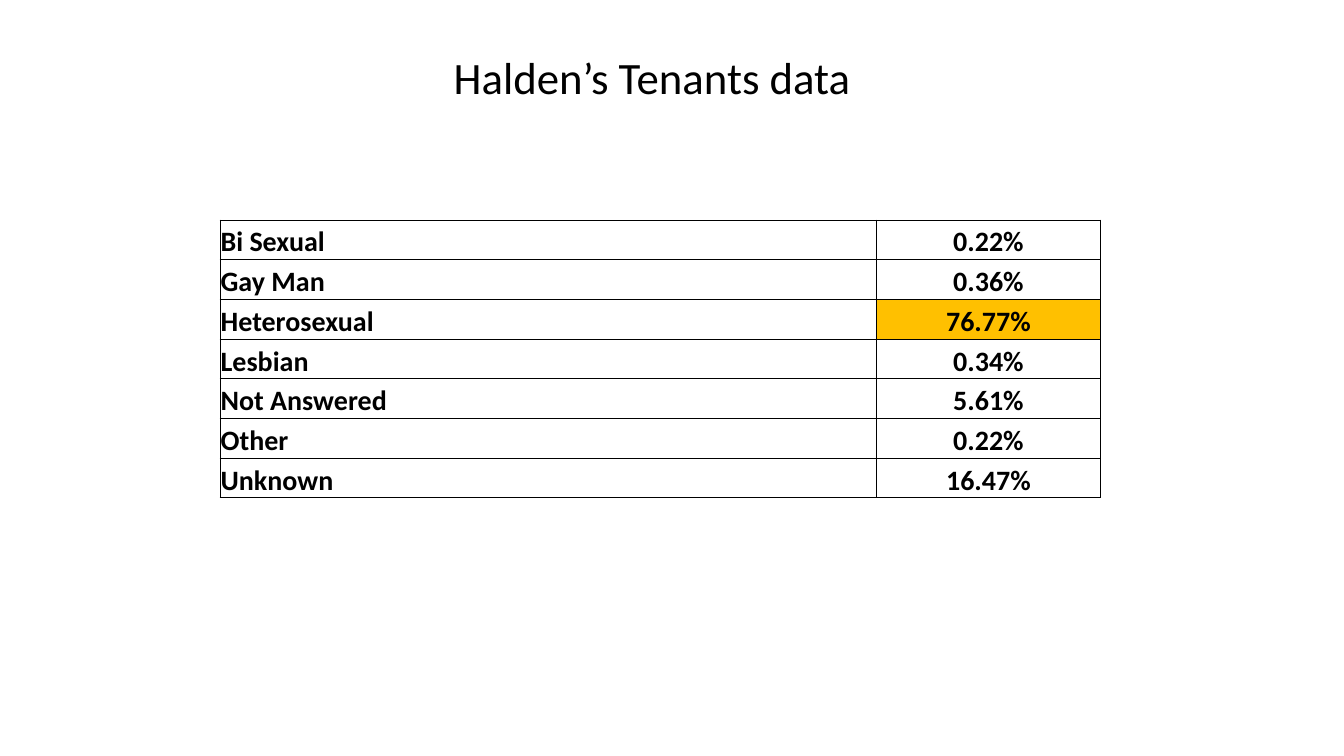
from dataclasses import dataclass

from lxml import etree
from pptx import Presentation
from pptx import util as u
from pptx.dml.color import RGBColor
from pptx.enum import text
from pptx.oxml import ns


@dataclass(frozen=True)
class Theme:
    font: str = "Calibri"
    ink: str = "000000"
    highlight: str = "FFC000"
    title_size: int = 32
    cell_size: int = 20
    border_width: float = 0.5


THEME = Theme()
LEFT = u.Cm(5.54)
COLUMN_WIDTHS = (u.Cm(16.54), u.Cm(5.66))
ROW_HEIGHT = u.Cm(1)
HIGHLIGHTED = "Heterosexual"
TENANTS = (
    ("Bi Sexual", "0.22%"),
    ("Gay Man", "0.36%"),
    (HIGHLIGHTED, "76.77%"),
    ("Lesbian", "0.34%"),
    ("Not Answered", "5.61%"),
    ("Other", "0.22%"),
    ("Unknown", "16.47%"),
)


def add_text(frame, words, size, align, bold=False):
    para = frame.paragraphs[0]
    para.alignment = align
    span = para.add_run()
    span.text = words
    span.font.name = THEME.font
    span.font.size = u.Pt(size)
    span.font.bold = bold
    span.font.color.rgb = RGBColor.from_string(THEME.ink)


def add_title(page, words):
    box = page.shapes.add_textbox(LEFT, u.Cm(1.12), u.Cm(21.79), u.Cm(1.63))
    box.text_frame.word_wrap = True
    add_text(box.text_frame, words, THEME.title_size, text.PP_ALIGN.CENTER)


def add_borders(cell):
    properties = cell._tc.get_or_add_tcPr()
    for side in ("a:lnL", "a:lnR", "a:lnT", "a:lnB"):
        line = etree.SubElement(properties, ns.qn(side), w=str(u.Pt(THEME.border_width)))
        fill = etree.SubElement(line, ns.qn("a:solidFill"))
        etree.SubElement(fill, ns.qn("a:srgbClr"), val=THEME.ink)


def fill_cell(cell, words, align, highlighted):
    cell.margin_left = cell.margin_right = cell.margin_top = u.Cm(0.02)
    cell.margin_bottom = u.Cm(0)
    cell.vertical_anchor = text.MSO_ANCHOR.BOTTOM
    add_borders(cell)
    if highlighted:
        cell.fill.solid()
        cell.fill.fore_color.rgb = RGBColor.from_string(THEME.highlight)
    else:
        cell.fill.background()
    add_text(cell.text_frame, words, THEME.cell_size, align, bold=True)


def add_tenant_table(page):
    frame = page.shapes.add_table(
        len(TENANTS), len(COLUMN_WIDTHS), LEFT, u.Cm(5.54),
        sum(COLUMN_WIDTHS), ROW_HEIGHT * len(TENANTS))
    table = frame.table
    table.first_row = table.horz_banding = False
    for column, width in zip(table.columns, COLUMN_WIDTHS):
        column.width = width
    for row, (group, share) in zip(table.rows, TENANTS):
        row.height = ROW_HEIGHT
        fill_cell(row.cells[0], group, text.PP_ALIGN.LEFT, False)
        fill_cell(row.cells[1], share, text.PP_ALIGN.CENTER, group == HIGHLIGHTED)


def main():
    deck = Presentation()
    deck.slide_width, deck.slide_height = u.Cm(33.87), u.Cm(19.05)
    page = deck.slides.add_slide(deck.slide_layouts[6])

    # Share of tenants by sexual orientation
    add_tenant_table(page)

    # Heading
    add_title(page, "Halden’s Tenants data")

    deck.save("out.pptx")


if __name__ == "__main__":
    main()
